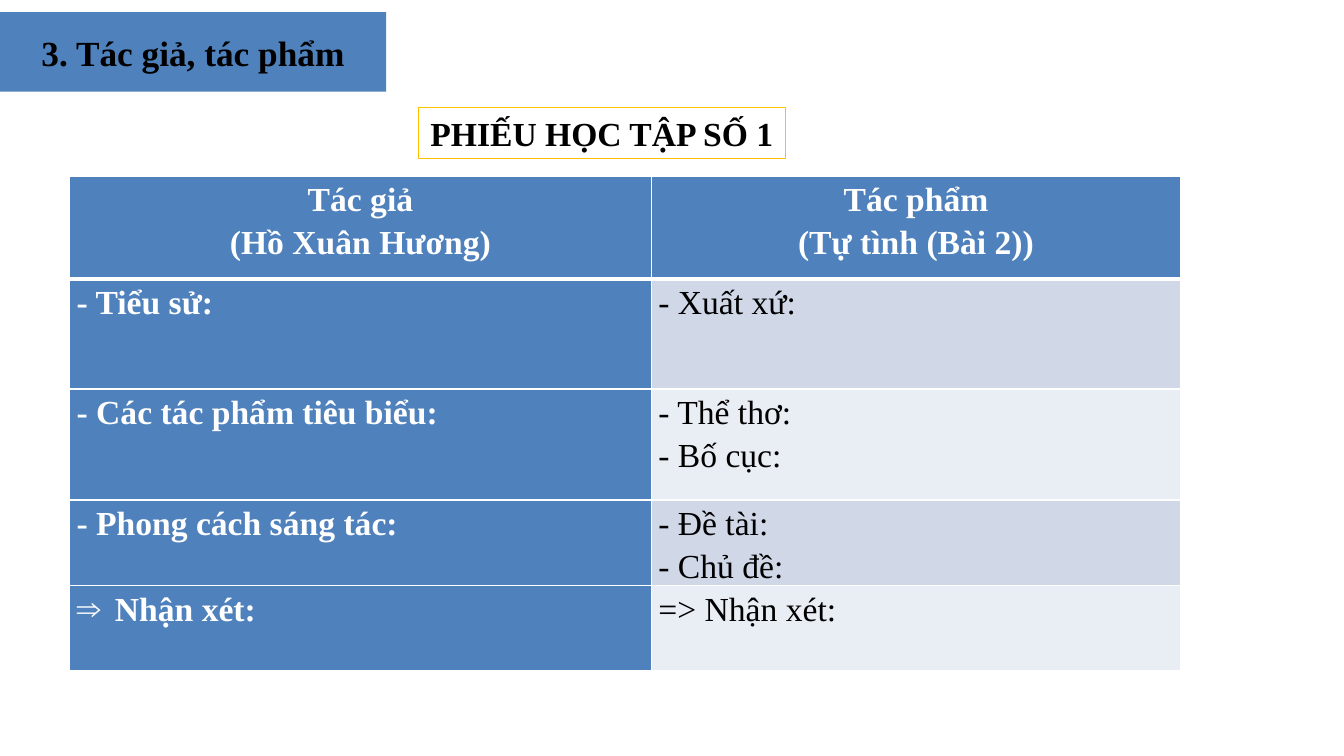
from lxml.etree import SubElement
from pptx import Presentation
from pptx.dml.color import RGBColor
from pptx.enum.shapes import MSO_SHAPE
from pptx.enum.text import MSO_ANCHOR, MSO_AUTO_SIZE, PP_ALIGN
from pptx.oxml.ns import qn
from pptx.util import Pt

PX = 9144  # EMU per px, 100 px to the inch
FONT = "Times New Roman"
BLUE = RGBColor(0x4F, 0x81, 0xBD)
BAND_DARK = RGBColor(0xD0, 0xD8, 0xE8)
BAND_LIGHT = RGBColor(0xE9, 0xED, 0xF4)
GOLD = RGBColor(0xFF, 0xC0, 0x00)
WHITE = RGBColor(0xFF, 0xFF, 0xFF)
BLACK = RGBColor(0, 0, 0)

COLUMN_WIDTHS = [577, 525]
ROW_HEIGHTS = [102, 109, 110, 85, 84]
WORKSHEET = [
    ("Tác giả\n(Hồ Xuân Hương)", "Tác phẩm\n(Tự tình (Bài 2))"),
    ("- Tiểu sử:", "- Xuất xứ:"),
    ("- Các tác phẩm tiêu biểu:", "- Thể thơ:\n- Bố cục:"),
    ("- Phong cách sáng tác:", "- Đề tài:\n- Chủ đề:"),
    ("Nhận xét:", "=> Nhận xét:"),
]


def px(*lengths):
    return [length * PX for length in lengths]


def add_bullet(paragraph, char, indent):
    properties = paragraph._p.get_or_add_pPr()
    properties.set("marL", str(indent * PX))
    properties.set("indent", str(-indent * PX))
    SubElement(properties, qn("a:buFont"), typeface=FONT)
    SubElement(properties, qn("a:buChar"), char=char)


def write(frame, text, size=24, color=BLACK, bold=True, align=PP_ALIGN.CENTER,
          spacing=None, bullet=None):
    for index, line in enumerate(text.split("\n")):
        paragraph = frame.add_paragraph() if index else frame.paragraphs[0]
        paragraph.alignment = align
        if spacing:
            paragraph.line_spacing = spacing
        if bullet:
            add_bullet(paragraph, bullet, 38)
        run = paragraph.add_run()
        run.text = line
        run.font.name = FONT
        run.font.size = Pt(size)
        run.font.bold = bold
        run.font.color.rgb = color


def set_borders(cell, **widths):
    """Draw white borders; keys are L, R, T and B, widths are points."""
    properties = cell._tc.get_or_add_tcPr()
    for side, width in widths.items():
        line = SubElement(properties, qn(f"a:ln{side}"), w=str(Pt(width)))
        fill = SubElement(line, qn("a:solidFill"))
        SubElement(fill, qn("a:srgbClr"), val=str(WHITE))


def add_heading(slide):
    heading = slide.shapes.title
    heading.left, heading.top, heading.width, heading.height = px(0, 12, 383, 79)
    heading.fill.solid()
    heading.fill.fore_color.rgb = BLUE
    frame = heading.text_frame
    frame.auto_size = MSO_AUTO_SIZE.NONE
    frame.vertical_anchor = MSO_ANCHOR.MIDDLE
    write(frame, "3. Tác giả, tác phẩm", size=25.2)


def add_worksheet_label(slide):
    label = slide.shapes.add_shape(MSO_SHAPE.RECTANGLE, *px(415, 107, 364, 50))
    label.shadow.inherit = False
    label.fill.background()
    label.line.color.rgb = GOLD
    label.line.width = Pt(0.75)
    label.text_frame.word_wrap = False
    write(label.text_frame, "PHIẾU HỌC TẬP SỐ 1")


def fill_cell(cell, text, row, column):
    is_header, is_blue = row == 0, row == 0 or column == 0
    cell.margin_left, cell.margin_right, cell.margin_top, cell.margin_bottom = px(7, 7, 0, 0)
    set_borders(cell, L=1, R=1, T=3 if row == 1 else 1, B=3 if is_header else 1)
    cell.fill.solid()
    band = BAND_DARK if row % 2 else BAND_LIGHT
    cell.fill.fore_color.rgb = BLUE if is_blue else band
    write(cell.text_frame, text, color=WHITE if is_blue else BLACK, bold=is_blue,
          align=PP_ALIGN.CENTER if is_header else PP_ALIGN.JUSTIFY, spacing=1.15,
          bullet="⇒" if (row, column) == (len(WORKSHEET) - 1, 0) else None)


def add_worksheet(slide):
    frame = slide.shapes.add_table(
        len(ROW_HEIGHTS), len(COLUMN_WIDTHS),
        *px(69, 175, sum(COLUMN_WIDTHS), sum(ROW_HEIGHTS)))
    table = frame.table
    for column, width in zip(table.columns, px(*COLUMN_WIDTHS)):
        column.width = width
    for row, height in zip(table.rows, px(*ROW_HEIGHTS)):
        row.height = height
    for row, texts in enumerate(WORKSHEET):
        for column, text in enumerate(texts):
            fill_cell(table.cell(row, column), text, row, column)


def main():
    presentation = Presentation()
    presentation.slide_width, presentation.slide_height = px(1333, 750)
    slide = presentation.slides.add_slide(presentation.slide_layouts[5])
    add_heading(slide)
    add_worksheet(slide)
    add_worksheet_label(slide)
    presentation.save("out.pptx")


if __name__ == "__main__":
    main()
